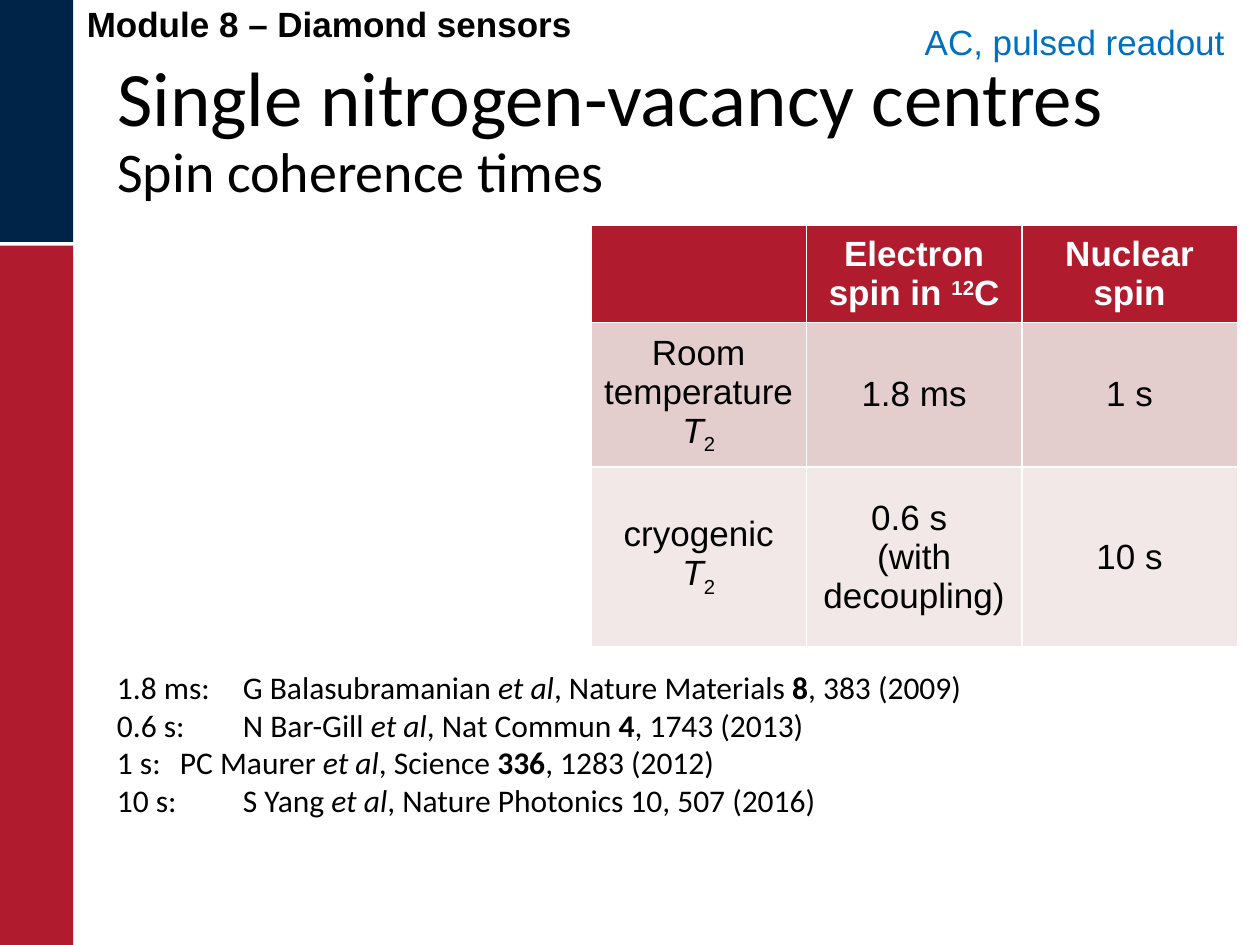
from dataclasses import dataclass

from pptx import Presentation
from pptx.dml.color import RGBColor
from pptx.enum.shapes import MSO_SHAPE
from pptx.enum.text import MSO_ANCHOR, PP_ALIGN
from pptx.util import Inches, Pt


@dataclass(frozen=True)
class Style:
    font: str
    size: int
    color: str = "000000"
    bold: bool = False


@dataclass(frozen=True)
class Theme:
    navy: str = "002448"
    red: str = "B01C2E"
    row_fills: tuple = ("B01C2E", "E4CDCD", "F2E8E8")
    module: Style = Style("Arial", 20, bold=True)
    title: Style = Style("Calibri", 44)
    subtitle: Style = Style("Calibri", 32)
    header: Style = Style("Arial", 20, "FFFFFF", True)
    body: Style = Style("Arial", 20)
    reference: Style = Style("Calibri", 18)
    tag: Style = Style("Arial", 20, "0070C0")


@dataclass(frozen=True)
class Span:
    text: str
    italic: bool = False
    bold: bool = False
    baseline: int = 0  # percent of the type size


@dataclass(frozen=True)
class Reference:
    value: str
    authors: str
    journal: str
    volume: str
    ending: str


THEME = Theme()
T2 = (Span("T", italic=True), Span("2", baseline=-25))
# Each cell is a list of paragraphs, each paragraph a list of spans
CELLS = [
    [
        [],
        [[Span("Electron spin in "), Span("12", baseline=30), Span("C")]],
        [[Span("Nuclear spin")]],
    ],
    [[[Span("Room temperature "), *T2]], [[Span("1.8 ms")]], [[Span("1 s")]]],
    [
        [[Span("cryogenic")], [*T2]],
        [[Span("0.6 s ")], [Span("(with decoupling)")]],
        [[Span("10 s")]],
    ],
]
COLUMN_WIDTH = 1.71
ROW_HEIGHTS = (0.77, 1.1, 1.43)
REFERENCES = [
    Reference("1.8 ms: ", "G Balasubramanian", ", Nature Materials ", "8", ", 383 (2009)"),
    Reference("0.6 s: ", "N Bar-Gill", ", Nat Commun ", "4", ", 1743 (2013)"),
    Reference("1 s:", "PC Maurer", ", Science ", "336", ", 1283 (2012)"),
    Reference("10 s: ", "S Yang", ", Nature Photonics 10, 507 (2016)", "", ""),
]


def color(value: str) -> RGBColor:
    return RGBColor.from_string(value)


def add_spans(para, spans: list[Span], style: Style) -> None:
    for span in spans:
        run = para.add_run()
        run.text = span.text
        run.font.name = style.font
        run.font.size = Pt(style.size)
        run.font.bold = style.bold or span.bold
        run.font.italic = span.italic
        run.font.color.rgb = color(style.color)
        if span.baseline:
            run.font._element.set("baseline", str(span.baseline * 1000))


def write(frame, paragraphs: list[list[Span]], style: Style, align=PP_ALIGN.LEFT) -> None:
    for index, spans in enumerate(paragraphs):
        para = frame.add_paragraph() if index else frame.paragraphs[0]
        para.alignment = align
        add_spans(para, spans, style)


def add_text(page, left, top, width, height, paragraphs, style: Style, wrap=True) -> None:
    box = page.shapes.add_textbox(Inches(left), Inches(top), Inches(width), Inches(height))
    box.text_frame.word_wrap = wrap
    write(box.text_frame, paragraphs, style)


def add_band(page, top: float, height: float, fill: str) -> None:
    band = page.shapes.add_shape(
        MSO_SHAPE.RECTANGLE, 0, Inches(top), Inches(0.58), Inches(height)
    )
    band.shadow.inherit = False
    band.fill.solid()
    band.fill.fore_color.rgb = color(fill)
    band.line.fill.background()


def set_title(page) -> None:
    title = page.shapes.title
    title.left, title.top = Inches(0.83), Inches(0.36)
    title.width, title.height = Inches(8.67), Inches(1.78)
    frame = title.text_frame
    frame.word_wrap = True
    frame.vertical_anchor = MSO_ANCHOR.TOP
    frame.margin_top = Inches(0.12)
    write(frame, [[Span("Single nitrogen-vacancy centres")]], THEME.title)
    add_spans(frame.add_paragraph(), [Span("Spin coherence times")], THEME.subtitle)
    for para in frame.paragraphs:
        para.alignment = PP_ALIGN.LEFT
        para.line_spacing = 0.9
        para.space_before = Pt(0)


def add_coherence_table(page) -> None:
    columns = len(CELLS[0])
    table = page.shapes.add_table(
        len(CELLS), columns, Inches(4.69), Inches(1.79),
        Inches(COLUMN_WIDTH * columns), Inches(sum(ROW_HEIGHTS)),
    ).table
    for column in table.columns:
        column.width = Inches(COLUMN_WIDTH)
    for row_index, (row, height) in enumerate(zip(CELLS, ROW_HEIGHTS)):
        table.rows[row_index].height = Inches(height)
        style = THEME.body if row_index else THEME.header
        for column_index, paragraphs in enumerate(row):
            cell = table.cell(row_index, column_index)
            cell.fill.solid()
            cell.fill.fore_color.rgb = color(THEME.row_fills[row_index])
            cell.vertical_anchor = MSO_ANCHOR.MIDDLE
            write(cell.text_frame, paragraphs, style, PP_ALIGN.CENTER)


def reference_spans(reference: Reference) -> list[Span]:
    spans = [
        Span(f"{reference.value}\t{reference.authors}"),
        Span(" et al", italic=True),
        Span(reference.journal),
        Span(reference.volume, bold=True),
        Span(reference.ending),
    ]
    return [span for span in spans if span.text]


def main() -> None:
    deck = Presentation()
    deck.slide_width, deck.slide_height = Inches(10), Inches(7.5)
    page = deck.slides.add_slide(deck.slide_layouts[5])
    add_band(page, 0, 1.92, THEME.navy)
    add_band(page, 1.95, 5.55, THEME.red)
    add_text(page, 0.59, -0.03, 8.58, 1, [[Span("Module 8 – Diamond sensors")]], THEME.module)
    set_title(page)
    add_coherence_table(page)
    references = [reference_spans(reference) for reference in REFERENCES]
    add_text(page, 0.83, 5.25, 8.66, 1.31, references, THEME.reference)
    add_text(page, 7.24, 0.11, 2.69, 0.44, [[Span("AC, pulsed readout")]], THEME.tag, wrap=False)
    deck.save("out.pptx")


if __name__ == "__main__":
    main()
